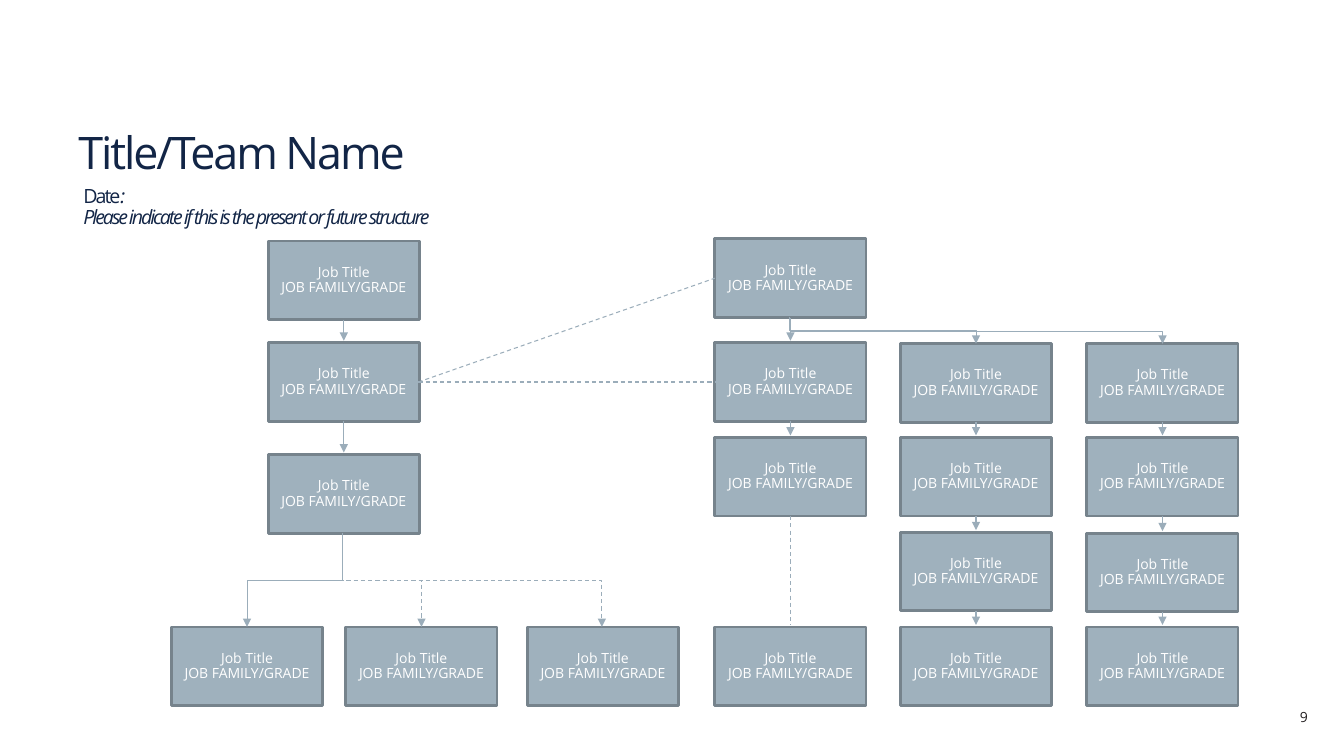
from lxml.etree import SubElement
from pptx import Presentation
from pptx.dml.color import RGBColor
from pptx.enum.dml import MSO_LINE
from pptx.enum.shapes import MSO_CONNECTOR, MSO_SHAPE
from pptx.enum.text import MSO_ANCHOR, PP_ALIGN
from pptx.oxml.ns import qn
from pptx.util import Inches, Pt

NAVY = RGBColor(0x12, 0x25, 0x46)
INK = RGBColor(0x23, 0x1F, 0x20)
WHITE = RGBColor(0xFF, 0xFF, 0xFF)
JOB_FILL = RGBColor(0x9F, 0xB1, 0xBD)
JOB_BORDER = RGBColor(0x76, 0x83, 0x8C)
REPORTING_LINE = RGBColor(0x9B, 0xAD, 0xBA)
JOB_WIDTH, JOB_HEIGHT = 1.5, 0.78


class OrgChart:
    """Draws job boxes, reporting lines and text on one slide in a shared style."""

    typeface = "Open Sans"

    def __init__(self, slide):
        self.slide = slide

    def fill_paragraph(self, paragraph, pieces, size, color, align=PP_ALIGN.LEFT, spacing=0):
        for piece in pieces:
            paragraph.add_run().text = piece
        paragraph.alignment = align
        paragraph.line_spacing = 0.9
        font = paragraph.font
        font.name, font.size = self.typeface, Pt(size)
        font.color.rgb = color
        if spacing:
            font._rPr.set("spc", str(round(spacing * 100)))

    def text(self, left, top, width, height, lines, size, color, anchor=MSO_ANCHOR.TOP, **style):
        box = self.slide.shapes.add_textbox(*map(Inches, (left, top, width, height)))
        frame = box.text_frame
        frame.word_wrap = True
        frame.vertical_anchor = anchor
        for index, pieces in enumerate(lines):
            paragraph = frame.add_paragraph() if index else frame.paragraphs[0]
            self.fill_paragraph(paragraph, pieces, size, color, **style)
        return frame

    def job(self, left, top):
        job = self.slide.shapes.add_shape(
            MSO_SHAPE.RECTANGLE, *map(Inches, (left, top, JOB_WIDTH, JOB_HEIGHT)))
        job.shadow.inherit = False
        job.fill.solid()
        job.fill.fore_color.rgb = JOB_FILL
        job.line.color.rgb = JOB_BORDER
        job.line.width = Pt(2)
        frame = job.text_frame
        frame.word_wrap = True
        frame.vertical_anchor = MSO_ANCHOR.MIDDLE
        self.fill_paragraph(frame.paragraphs[0], ["Job Title"], 10, WHITE, PP_ALIGN.CENTER)
        self.fill_paragraph(frame.add_paragraph(), ["JOB FAMILY/GRADE"], 10, WHITE,
                            PP_ALIGN.CENTER)

    def link(self, start, end, dashed=False, arrow=True, kind=MSO_CONNECTOR.STRAIGHT):
        link = self.slide.shapes.add_connector(kind, *map(Inches, (*start, *end)))
        link.line.color.rgb = REPORTING_LINE
        link.line.width = Pt(0.75)
        if dashed:
            link.line.dash_style = MSO_LINE.DASH
        if arrow:
            SubElement(link.line._get_or_add_ln(), qn("a:tailEnd"), type="triangle")
        SubElement(link._element.spPr, qn("a:effectLst"))
        return link

    def branch(self, start, end, dashed=False):
        (x1, y1), (x2, y2) = start, end
        center_x, center_y = (x1 + x2) / 2, (y1 + y2) / 2
        rightward = x2 > x1
        half_drop = (y2 - y1) / 2 * (1 if rightward else -1)
        half_span = abs(x2 - x1) / 2
        link = self.link((center_x + half_drop, center_y - half_span),
                         (center_x - half_drop, center_y + half_span),
                         dashed, kind=MSO_CONNECTOR.ELBOW)
        link._element.spPr.xfrm.set("rot", str((270 if rightward else 90) * 60000))

    def corner(self, start, end):
        link = self.link(start, end, kind=MSO_CONNECTOR.ELBOW)
        link._element.spPr.find(qn("a:prstGeom")).set("prst", "bentConnector2")


def main():
    deck = Presentation()
    deck.slide_width, deck.slide_height = Inches(13.33), Inches(7.5)
    chart = OrgChart(deck.slides.add_slide(deck.slide_layouts[6]))

    chart.text(12.02, 7, 1.05, 0.27, [["9"]], 10, INK, align=PP_ALIGN.RIGHT)
    title = chart.text(0.68, 0.76, 11.86, 1.02, [["Title/Team Name"]], 32, NAVY,
                       MSO_ANCHOR.BOTTOM, spacing=-1.5)
    title.margin_bottom = 0

    bottom_row = 6.22
    job_columns = {
        1.7: [bottom_row],
        2.66: [2.39, 3.4, 4.51],
        3.43: [bottom_row],
        5.23: [bottom_row],
        7.09: [2.37, 3.4, 4.34, bottom_row],
        8.93: [3.41, 4.34, 5.28, bottom_row],
        10.78: [3.41, 4.34, 5.29, bottom_row],
    }
    for left, tops in job_columns.items():
        for top in tops:
            chart.job(left, top)

    for left in (2.66, 7.09, 8.93, 10.78):
        center = left + JOB_WIDTH / 2
        tops = job_columns[left]
        for upper, lower in zip(tops, tops[1:]):
            distant = lower - upper > 1.5
            chart.link((center, upper + JOB_HEIGHT), (center, lower - 0.02),
                       dashed=distant, arrow=not distant)

    team_lead = (3.4, 5.29)
    for report, dashed in ((2.45, False), (4.18, True), (5.97, True)):
        chart.branch(team_lead, (report, bottom_row), dashed)

    for peer_middle in (2.76, 3.79):
        chart.link((4.15, 3.79), (7.09, peer_middle), dashed=True, arrow=False)

    chart.branch((7.83, 3.15), (9.68, 3.41))
    chart.corner((7.84, 3.29), (11.53, 3.41))

    date = chart.text(
        0.73, 1.8, 10.84, 0.57,
        [["Date", ":"], ["Please indicate if this is the present or future structure"]],
        14, NAVY, spacing=-1.5)
    date.paragraphs[0].runs[1].font.italic = True
    date.paragraphs[1].font.italic = True

    deck.save("out.pptx")


if __name__ == "__main__":
    main()
